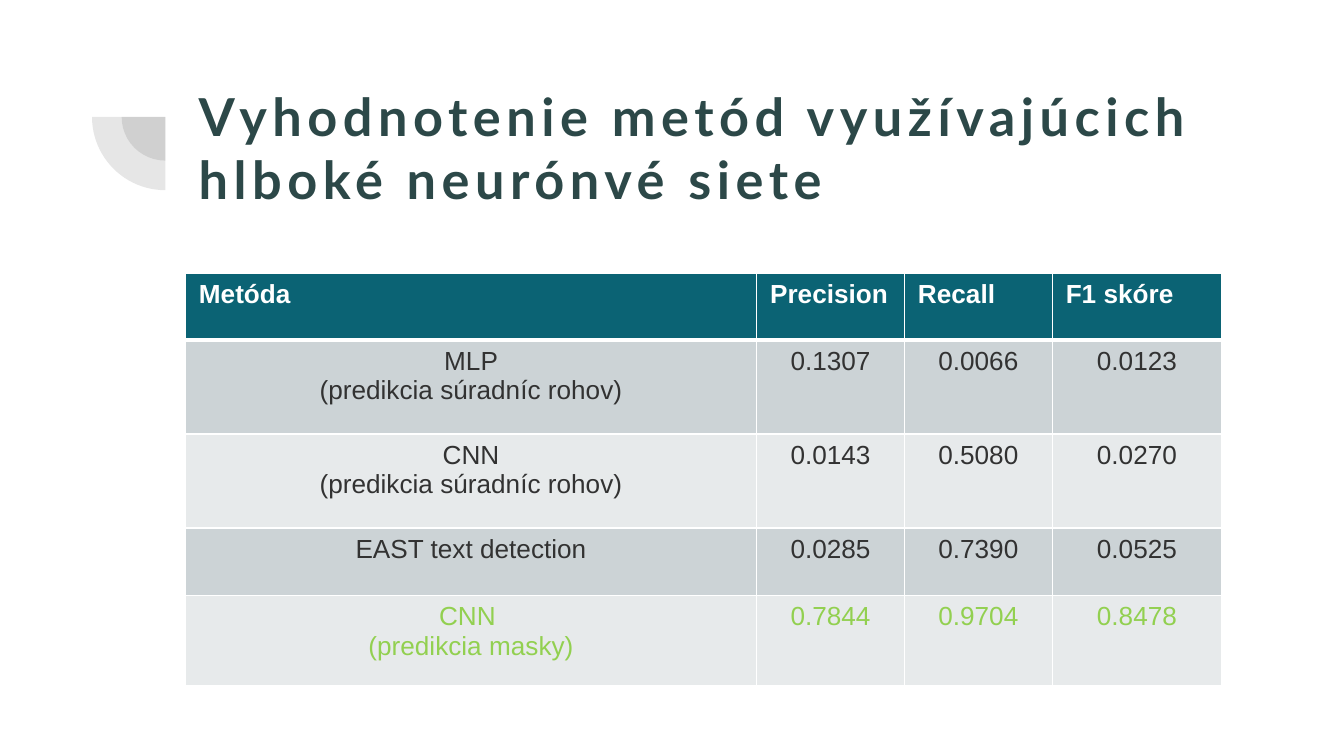
"""Build a slide with a table that compares deep learning methods."""
from lxml.etree import SubElement
from pptx import Presentation
from pptx.dml.color import RGBColor
from pptx.enum.shapes import MSO_SHAPE
from pptx.enum.text import MSO_ANCHOR, PP_ALIGN
from pptx.oxml.ns import qn
from pptx.util import Inches, Pt

TITLE = "Vyhodnotenie metód využívajúcich hlboké neurónvé siete"
ROWS = [
    ("Metóda", "Precision", "Recall", "F1 skóre"),
    ("MLP\n(predikcia súradníc rohov)", "0.1307", "0.0066", "0.0123"),
    ("CNN\n(predikcia súradníc rohov)", "0.0143", "0.5080", "0.0270"),
    ("EAST text detection", "0.0285", "0.7390", "0.0525"),
    ("CNN \n(predikcia masky)", "0.7844", "0.9704", "0.8478"),
]
COL_WIDTHS = (4.25, 1.1, 1.1, 1.26)
ROW_HEIGHTS = (0.5, 0.7, 0.7, 0.5, 0.67)
LEFT, TABLE_TOP = 1.38, 2.03
PIE_CENTER = (1.23, 0.87)
PIE_SIZES = (0.65, 1.09)

WHITE = RGBColor(0xFF, 0xFF, 0xFF)
GREY = RGBColor(0x42, 0x42, 0x42)
TITLE_INK = RGBColor(0x2C, 0x48, 0x48)
TEAL = RGBColor(0x0B, 0x63, 0x74)
INK = RGBColor(0x32, 0x32, 0x32)
GREEN = RGBColor(0x92, 0xD0, 0x50)
BANDS = (RGBColor(0xCC, 0xD3, 0xD6), RGBColor(0xE7, 0xEA, 0xEB))


def write(tf, text, size=14, font="Arial", color=INK, bold=False,
          align=PP_ALIGN.LEFT, spacing=None):
    for i, line in enumerate(text.split("\n")):
        p = tf.paragraphs[0] if i == 0 else tf.add_paragraph()
        p.alignment = align
        r = p.add_run()
        r.text = line
        r.font.size, r.font.name, r.font.bold = Pt(size), font, bold
        r.font.color.rgb = color
        if spacing:
            r.font._element.set("spc", str(spacing * 100))


def add_pie(slide, size):
    left, top = (Inches(c - size / 2) for c in PIE_CENTER)
    sp = slide.shapes.add_shape(MSO_SHAPE.PIE, left, top, Inches(size), Inches(size))
    sp.adjustments[0], sp.adjustments[1] = 108, 162
    sp.rotation = 270
    sp.shadow.inherit = False
    sp.line.fill.background()
    sp.fill.solid()
    sp.fill.fore_color.rgb = GREY
    color = sp._element.spPr.find(qn("a:solidFill"))[0]
    SubElement(color, qn("a:alpha"), val="13000")


def add_borders(cell, bottom=1, top=1):
    tcPr = cell._tc.get_or_add_tcPr()
    for side, width in (("L", 1), ("R", 1), ("T", top), ("B", bottom)):
        ln = SubElement(tcPr, qn(f"a:ln{side}"), w=str(Pt(width)))
        fill = SubElement(ln, qn("a:solidFill"))
        SubElement(fill, qn("a:srgbClr"), val=str(WHITE))


def add_results(slide):
    table = slide.shapes.add_table(
        len(ROWS), len(COL_WIDTHS), Inches(LEFT), Inches(TABLE_TOP),
        Inches(sum(COL_WIDTHS)), Inches(sum(ROW_HEIGHTS))).table
    for column, width in zip(table.columns, COL_WIDTHS):
        column.width = Inches(width)
    for i, (row, height, values) in enumerate(zip(table.rows, ROW_HEIGHTS, ROWS)):
        row.height = Inches(height)
        header, best = i == 0, i == len(ROWS) - 1
        for cell, value in zip(row.cells, values):
            add_borders(cell, bottom=3 if header else 1, top=3 if i == 1 else 1)
            cell.fill.solid()
            cell.fill.fore_color.rgb = TEAL if header else BANDS[(i - 1) % 2]
            write(cell.text_frame, value, bold=header,
                  color=WHITE if header else GREEN if best else INK,
                  align=PP_ALIGN.LEFT if header else PP_ALIGN.CENTER)


def main():
    prs = Presentation()
    prs.slide_width = Inches(10)
    prs.slide_height = prs.slide_width * 9 // 16
    slide = prs.slides.add_slide(prs.slide_layouts[6])
    for size in PIE_SIZES:
        add_pie(slide, size)
    tf = slide.shapes.add_textbox(
        Inches(LEFT), Inches(0.53), Inches(8.35), Inches(1.09)).text_frame
    tf.word_wrap = True
    tf.vertical_anchor = MSO_ANCHOR.TOP
    tf.margin_left = tf.margin_right = tf.margin_top = tf.margin_bottom = Inches(0.1)
    write(tf, TITLE, size=28, font="Lato", color=TITLE_INK, bold=True, spacing=3)
    add_results(slide)
    prs.save("out.pptx")


if __name__ == "__main__":
    main()
